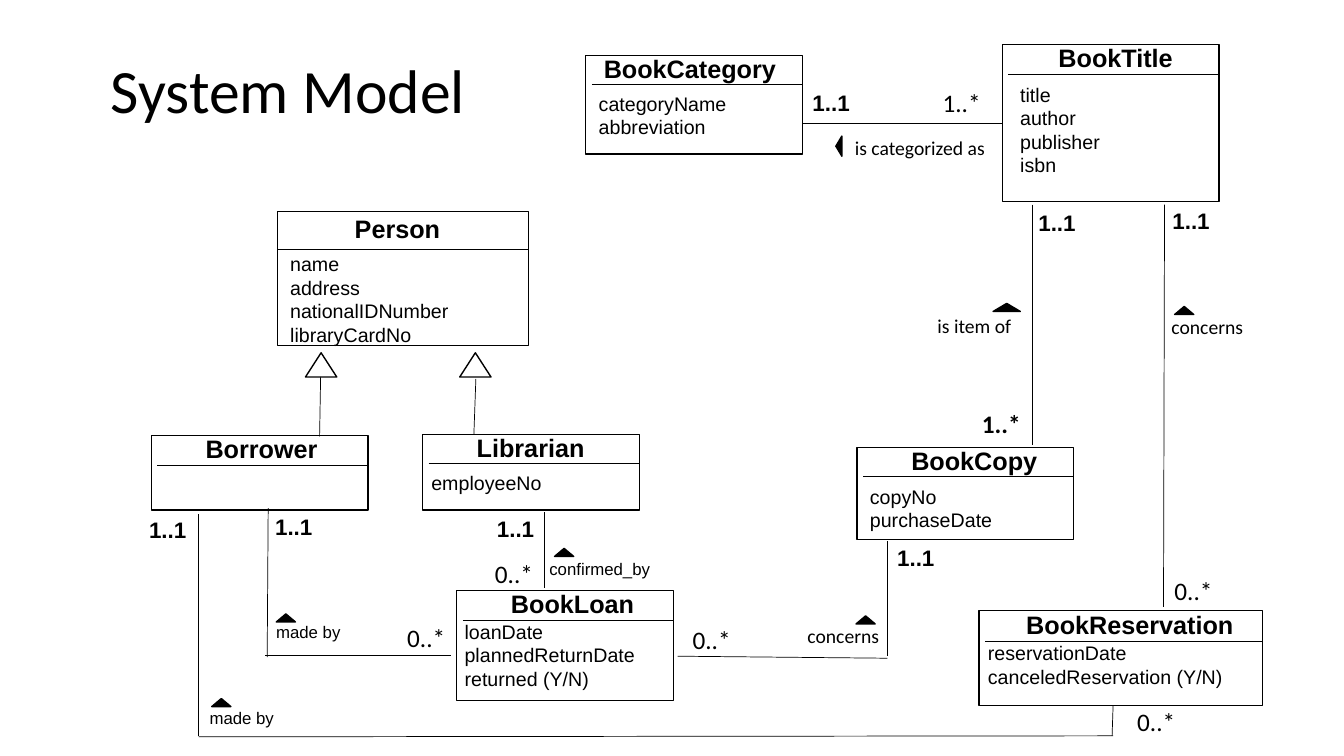
import pptx
import pptx.util
import pptx.dml.color
import pptx.enum.shapes
import pptx.enum.text
import pptx.oxml.ns
import lxml.etree

COLORS = {"ink": "000000", "paper": "FFFFFF"}
INK, PAPER = (pptx.dml.color.RGBColor.from_string(COLORS[c]) for c in ("ink", "paper"))
SHAPE = pptx.enum.shapes.MSO_SHAPE
COLS, ROWS = 13.33, 7.5

prs = pptx.Presentation()
prs.slide_width = pptx.util.Inches(COLS)
prs.slide_height = pptx.util.Inches(ROWS)
col, row = prs.slide_width / COLS, prs.slide_height / ROWS
s = prs.slides.add_slide(prs.slide_layouts[6])


def add_text(x, y, w, h, lines, size, font="Arial", bold=False):
    sp = s.shapes.add_textbox(int(x * col), int(y * row), int(w * col), int(h * row))
    tf = sp.text_frame
    tf.word_wrap = True
    tf.auto_size = pptx.enum.text.MSO_AUTO_SIZE.SHAPE_TO_FIT_TEXT
    tf.text = "\n".join(lines)
    for p in tf.paragraphs:
        p.font.name, p.font.size, p.font.bold = font, pptx.util.Pt(size), bold
        p.font.color.rgb = INK
    return tf


def add_line(x1, y1, x2, y2):
    cx = s.shapes.add_connector(pptx.enum.shapes.MSO_CONNECTOR.STRAIGHT,
                                int(x1 * col), int(y1 * row), int(x2 * col), int(y2 * row))
    cx.line.color.rgb = INK
    cx.line.width = pptx.util.Pt(0.5)
    lxml.etree.SubElement(cx._element.spPr, pptx.oxml.ns.qn("a:effectLst"))
    return cx


# Title
tf = add_text(1, 0.3, 12.18, 1.25, ["System Model"], 44, "Calibri")
tf.auto_size = pptx.enum.text.MSO_AUTO_SIZE.NONE
tf.vertical_anchor = pptx.enum.text.MSO_ANCHOR.MIDDLE
tf.paragraphs[0].line_spacing = 0.9

# Boxes and triangles: shape, x, y, w, h, fill, rotation
classes = [
    # name, x, y, w, h, name x, name y, rule y, attribute x, attribute y, attributes
    ("Borrower", 1.5, 4.32, 2.15, 0.74, 1.94, 4.25, 4.62, 0, 0, []),
    ("Librarian", 4.19, 4.31, 2.15, 0.75, 4.63, 4.24, 4.6, 4.18, 4.62, ["employeeNo"]),
    ("BookLoan", 4.53, 5.86, 2.15, 1.09, 4.97, 5.79, 6.15, 4.51, 6.1,
     ["loanDate", "plannedReturnDate", "returned (Y/N)"]),
    ("BookReservation", 9.71, 6.06, 2.81, 0.94, 10.08, 6, 6.36, 9.7, 6.31,
     ["reservationDate", "canceledReservation (Y/N)"]),
    ("BookCopy", 8.5, 4.44, 2.15, 0.91, 8.94, 4.37, 4.73, 8.53, 4.76,
     ["copyNo", "purchaseDate"]),
    ("BookTitle", 9.94, 0.44, 2.15, 1.56, 10.4, 0.37, 0.74, 10.02, 0.77,
     ["title", "author", "publisher", "isbn"]),
    ("Person", 2.75, 2.1, 2.49, 1.33, 3.42, 2.07, 2.47, 2.78, 2.45,
     ["name", "address", "nationalIDNumber", "libraryCardNo"]),
    ("BookCategory", 5.81, 0.55, 2.15, 0.98, 5.89, 0.48, 0.84, 5.84, 0.86,
     ["categoryName", "abbreviation"]),
]
drawn = [(SHAPE.RECTANGLE, *c[1:5], PAPER, 0) for c in classes]
drawn += [(SHAPE.ISOSCELES_TRIANGLE, x, 3.5, 0.31, 0.24, PAPER, 0) for x in (3.03, 4.56)]
drawn += [(SHAPE.ISOSCELES_TRIANGLE, x, y, 0.19, 0.08, INK, 0) for x, y in
          [(2.1, 6.93), (2.74, 6.09), (5.5, 5.44), (8.49, 6.11), (11.65, 3.04)]]
drawn += [(SHAPE.ISOSCELES_TRIANGLE, 9.85, 3.01, 0.27, 0.08, INK, 0),
          (SHAPE.ISOSCELES_TRIANGLE, 8.22, 1.42, 0.2, 0.06, INK, 270)]
shapes = []
for kind, x, y, w, h, fill, rotation in drawn:
    sp = s.shapes.add_shape(kind, int(x * col), int(y * row), int(w * col), int(h * row))
    sp.shadow.inherit = False
    sp.fill.solid()
    sp.fill.fore_color.rgb = fill
    sp.line.color.rgb = INK
    sp.line.width = pptx.util.Pt(1)
    sp.rotation = rotation
    shapes.append(sp)
boxes = {c[0]: sp for c, sp in zip(classes, shapes)}

# Class names, rules and attributes
for name, x, y, w, h, name_x, name_y, rule_y, attr_x, attr_y, attrs in classes:
    add_text(name_x, name_y, 2.4, 0.4, [name], 18, bold=True)
    add_line(x if name == "Person" else x + 0.06, rule_y, x + w, rule_y)
    if attrs:
        add_text(attr_x, attr_y, 3.07, 0.1 + 0.235 * len(attrs), attrs, 14)

# Inheritance and association lines
for ends in [
    (3.18, 3.74, 3.17, 4.33), (4.72, 3.76, 4.7, 4.31),
    (2.66, 5.04, 2.65, 6.52), (2.63, 6.5, 4.47, 6.5),
    (1.97, 5.1, 1.97, 7.3), (1.97, 7.31, 11.04, 7.3), (11.04, 7, 11.03, 7.3),
    (5.4, 5.08, 5.4, 5.83),
    (6.72, 6.51, 8.8, 6.53), (8.8, 5.37, 8.8, 6.51),
    (11.55, 2.03, 11.54, 6.02), (10.24, 2.03, 10.24, 4.41),
]:
    add_line(*ends)
add_line(9.94, 1.22, 7.95, 1.22).begin_connect(boxes["BookTitle"], 1)

# Multiplicities
for x, y in [(1.38, 5.07), (2.63, 5.04), (4.83, 5.06), (8.8, 5.35),
             (10.2, 2.03), (11.53, 2.01), (7.96, 0.84)]:
    add_text(x, y, 0.78, 0.37, ["1..1"], 16, bold=True)
for x, y in [(6.77, 6.14), (4.81, 5.49), (3.94, 6.12), (11.18, 6.96), (11.55, 5.66)]:
    add_text(x, y, 0.78, 0.4, ["0..*"], 18, "Calibri")
for x, y, bold in [(9.64, 4, True), (9.25, 0.82, False)]:
    add_text(x, y, 0.78, 0.4, ["1..*"], 18, "Calibri", bold)

# Association names
for x, y, w, label in [(1.98, 6.97, 1.18, "made by"), (2.64, 6.12, 1.18, "made by"),
                       (5.35, 5.49, 1.82, "confirmed_by")]:
    add_text(x, y, w, 0.3, [label], 12)
for x, y, w, label in [(7.91, 6.14, 1.18, "concerns"), (11.52, 3.08, 1.18, "concerns"),
                       (8.38, 1.3, 2.77, "is categorized as"), (9.2, 3.07, 2.77, "is item of")]:
    add_text(x, y, w, 0.34, [label], 14, "Calibri")

prs.save("out.pptx")
